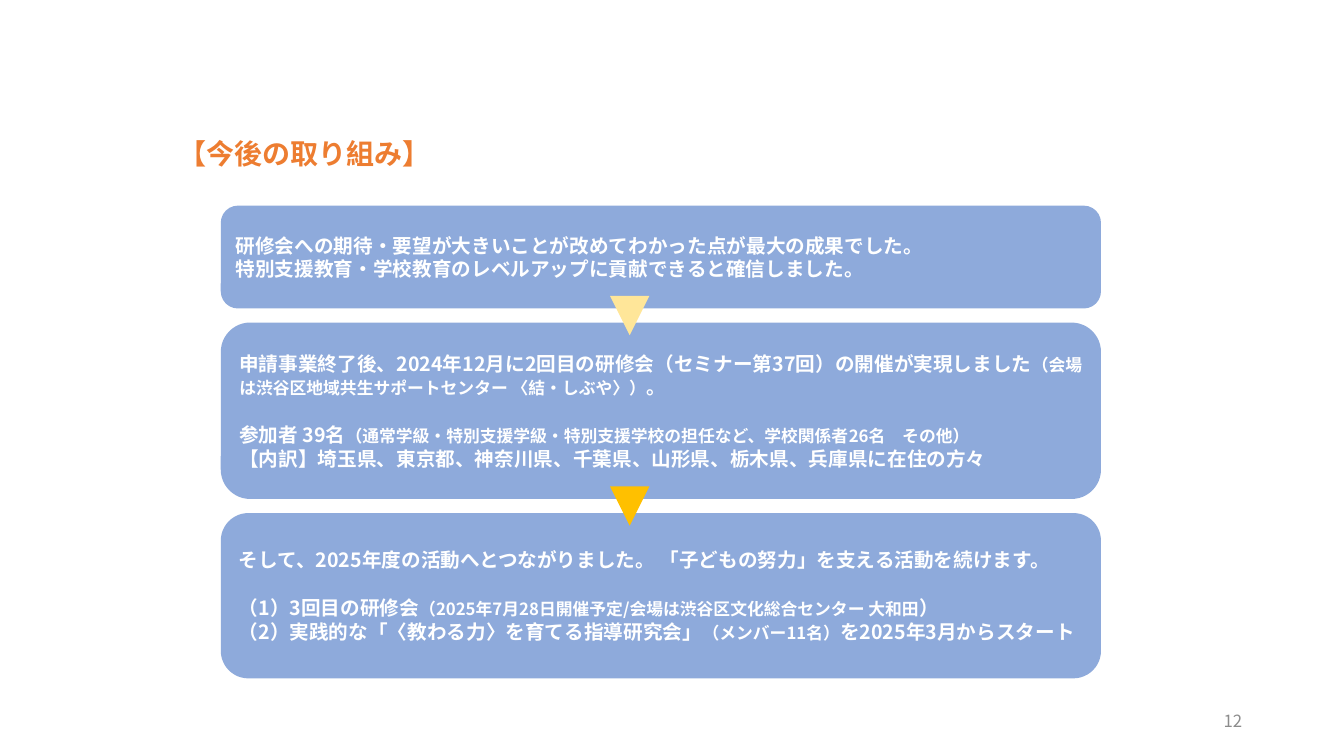
import pptx
import pptx.util
import pptx.dml.color
import pptx.enum.shapes
import pptx.enum.text
import pptx.oxml
import pptx.oxml.ns
from lxml import etree

IN = pptx.util.Inches
FONT = "Noto Sans CJK JP"
ALIGN = pptx.enum.text.PP_ALIGN
ANCHOR = pptx.enum.text.MSO_ANCHOR
SHAPE = pptx.enum.shapes.MSO_SHAPE

# Column of steps: left edge, width, first top and gap between boxes
LEFT, WIDTH, TOP, GAP = 2.19, 8.73, 2.04, 0.14
ARROW_LEFT, ARROW_SIZE = 6.05, 0.39
BODY, SMALL, LINE = 14, 12, 17

# Each step: height, colour of the arrow below it, paragraphs.
# A paragraph is (blank lines before, [(text, size), ...]).
STEPS = [
    (1.02, "FFE699", [
        (0, [("研修会への期待・要望が大きいことが改めてわかった点が最大の成果でした。", BODY)]),
        (0, [("特別支援教育・学校教育のレベルアップに貢献できると確信しました。", BODY)]),
    ]),
    (1.75, "FFC000", [
        (0, [("申請事業終了後、2024年12月に2回目の研修会（セミナー第37回）の開催が実現しました", BODY),
             ("（会場は渋谷区地域共生サポートセンター 〈結・しぶや〉）", SMALL),
             ("。", BODY)]),
        (1, [("参加者 39名", BODY),
             ("（通常学級・特別支援学級・特別支援学校の担任など、学校関係者26名　その他）", SMALL)]),
        (0, [("【内訳】埼玉県、東京都、神奈川県、千葉県、山形県、栃木県、兵庫県に在住の方々", BODY)]),
    ]),
    (1.64, None, [
        (0, [("そして、2025年度の活動へとつながりました。 「子どもの努力」を支える活動を続けます。", BODY)]),
        (1, [("（1）3回目の研修会", BODY),
             ("（2025年7月28日開催予定/会場は渋谷区文化総合センター 大和田", SMALL),
             ("）", BODY)]),
        (0, [("（2）実践的な「〈教わる力〉を育てる指導研究会」", BODY),
             ("（メンバー11名）", SMALL),
             ("を2025年3月からスタート", BODY)]),
    ]),
]


def rgb(color):
    return pptx.dml.color.RGBColor.from_string(color)


def set_font(p, size, color, bold=False):
    """Format a whole paragraph, East Asian typeface included."""
    font = p.font
    font.name, font.size, font.bold = FONT, pptx.util.Pt(size), bold
    font.color.rgb = rgb(color)
    props = p._p.pPr.find(pptx.oxml.ns.qn("a:defRPr"))
    etree.SubElement(props, pptx.oxml.ns.qn("a:ea")).set("typeface", FONT)


def add_block(s, kind, left, top, width, height, color):
    sp = s.shapes.add_shape(kind, IN(left), IN(top), IN(width), IN(height))
    sp.shadow.inherit = False
    sp.fill.solid()
    sp.fill.fore_color.rgb = rgb(color)
    sp.line.fill.background()
    return sp


def add_step(s, top, height, paragraphs):
    sp = add_block(s, SHAPE.ROUNDED_RECTANGLE, LEFT, top, WIDTH, height, "8EAADB")
    tf = sp.text_frame
    tf.word_wrap = True
    tf.vertical_anchor = ANCHOR.MIDDLE
    for i, (blank, runs) in enumerate(paragraphs):
        p = tf.add_paragraph() if i else tf.paragraphs[0]
        p.alignment = ALIGN.LEFT
        p.line_spacing = pptx.util.Pt(LINE)
        p.space_before = pptx.util.Pt(LINE * blank)
        set_font(p, BODY, "FFFFFF", True)
        for text, size in runs:
            r = p.add_run()
            r.text = text
            if size != BODY:
                r.font.size = pptx.util.Pt(size)


def add_arrow(s, middle, color):
    sp = add_block(s, SHAPE.ISOSCELES_TRIANGLE, ARROW_LEFT,
                   middle - ARROW_SIZE / 2, ARROW_SIZE, ARROW_SIZE, color)
    sp.rotation = 180


def add_title(s, text):
    sp = s.shapes.title
    sp.left, sp.top, sp.width, sp.height = IN(1.67), IN(1.23), IN(10), IN(0.51)
    tf = sp.text_frame
    tf.auto_size = pptx.enum.text.MSO_AUTO_SIZE.NONE
    tf.vertical_anchor = ANCHOR.BOTTOM
    p = tf.paragraphs[0]
    p.text = text
    p.alignment = ALIGN.LEFT
    p.line_spacing = 0.9
    set_font(p, 20, "ED7D31", True)


def add_slide_number(s, number):
    sp = s.shapes.add_textbox(IN(9.42), IN(6.95), IN(3), IN(0.4))
    tf = sp.text_frame
    tf.word_wrap = True
    tf.vertical_anchor = ANCHOR.MIDDLE
    p = tf.paragraphs[0]
    p.alignment = ALIGN.RIGHT
    p.text = str(number)
    set_font(p, 12, "8C8C8C")


def main():
    prs = pptx.Presentation()
    prs.slide_width, prs.slide_height = IN(13.33), IN(7.5)
    s = prs.slides.add_slide(prs.slide_layouts[5])
    add_title(s, "【今後の取り組み】")

    # Steps, stacked with equal gaps
    top, arrows = TOP, []
    for height, arrow_color, paragraphs in STEPS:
        add_step(s, top, height, paragraphs)
        if arrow_color:
            arrows.append((top + height + GAP / 2, arrow_color))
        top += height + GAP

    # Arrows lie over the boxes, centred on the gaps
    for middle, color in arrows:
        add_arrow(s, middle, color)

    add_slide_number(s, 12)
    prs.save("out.pptx")


if __name__ == "__main__":
    main()
